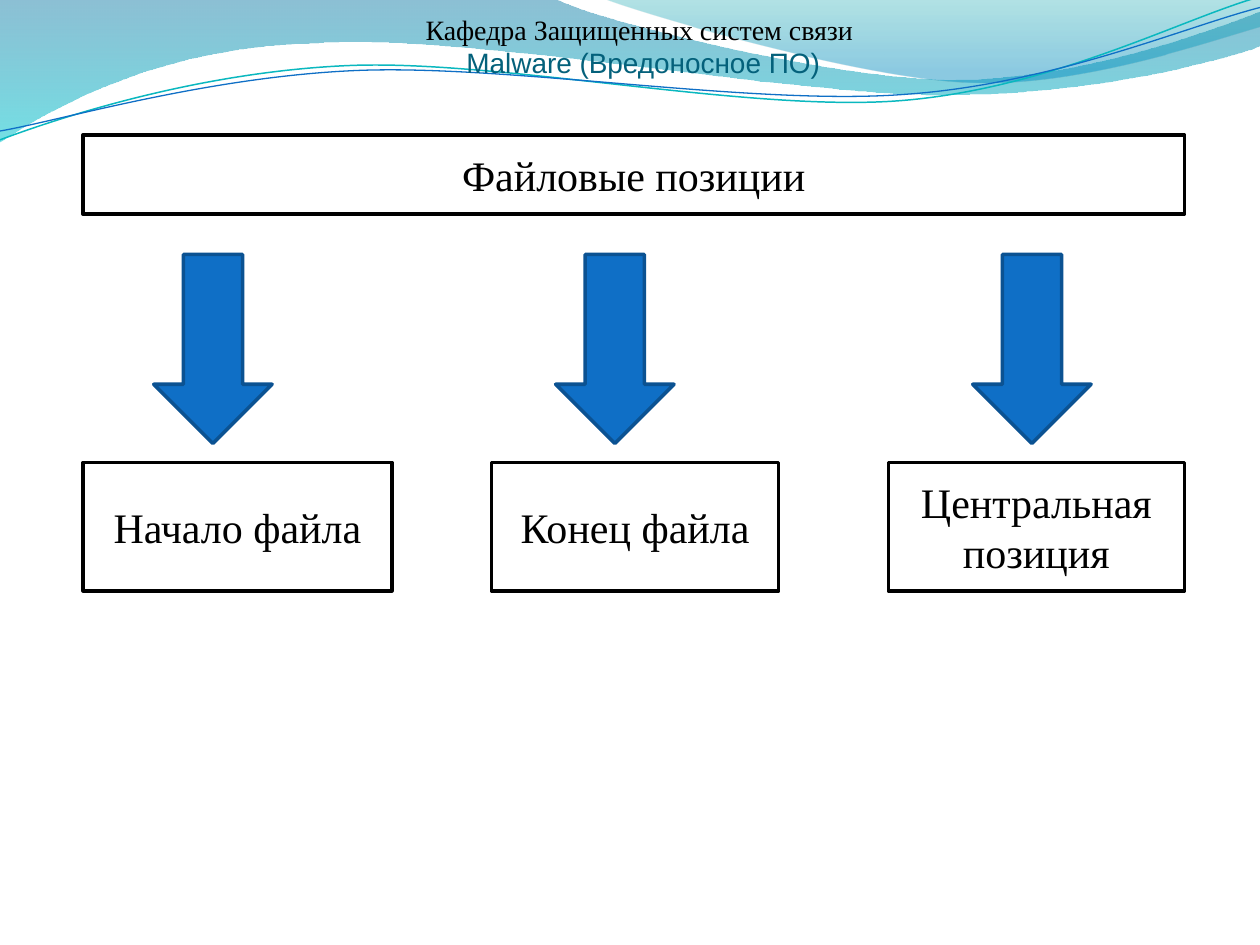
"""Build a slide that shows three file positions below a common heading."""
from math import cos, radians, sin

from lxml.etree import SubElement
from pptx import Presentation
from pptx.dml.color import RGBColor
from pptx.enum.shapes import MSO_SHAPE
from pptx.enum.text import MSO_ANCHOR, MSO_AUTO_SIZE, PP_ALIGN
from pptx.oxml.ns import qn
from pptx.util import Inches, Pt

COLORS = {
    "black": "000000",
    "white": "FFFFFF",
    "title": "04617B",
    "arrow": "0F6FC6",
    "arrow_edge": "0B5292",
    "teal_line": "0AB8BF",
    "left_top": "0074A1",
    "left_bottom": "00C6CF",
    "right_top": "00A1A9",
    "right_bottom": "008BBF",
}
SERIF = "Times New Roman"
CURVE_TILT = 2.7

LEFT_WAVE = [
    [(0, 0)], [(4.4, -0.01)],
    [(4.76, 0.17), (6.64, 0.63), (7.58, 0.63)],
    [(8.53, 0.63), (9.58, 0.26), (10, 0.09)],
    [(10.01, 0.36)],
    [(9.83, 0.44), (8.7, 0.76), (7.46, 0.75)],
    [(6.22, 0.75), (3.82, 0.28), (2.57, 0.34)],
    [(1.29, 0.36), (0.46, 0.83), (-0.01, 1.13)],
    [(0, 0)],
]
RIGHT_WAVE = [
    [(4.79, -0.01)],
    [(5.09, 0.11), (6.82, 0.62), (7.69, 0.65)],
    [(8.56, 0.69), (9.61, 0.32), (10, 0.21)],
    [(10, 0)], [(4.79, -0.01)],
]
TEAL_CURVE = [
    [(0, 1.11)],
    [(0.48, 0.93), (1.58, 0.57), (2.77, 0.52)],
    [(3.95, 0.47), (5.93, 0.89), (7.13, 0.8)],
    [(8.33, 0.71), (9.38, 0.15), (9.98, -0.02)],
]
BLUE_CURVE = [
    [(0, 1.04)],
    [(0.47, 0.96), (1.64, 0.61), (2.83, 0.56)],
    [(4.03, 0.51), (5.97, 0.84), (7.17, 0.75)],
    [(8.36, 0.67), (9.41, 0.21), (10, 0.06)],
]


def color(name):
    """Return the named colour."""
    return RGBColor.from_string(COLORS[name])


def turn(point, center, degrees):
    """Turn a point clockwise around a center."""
    angle = radians(degrees)
    x, y = point[0] - center[0], point[1] - center[1]
    return (
        center[0] + x * cos(angle) - y * sin(angle),
        center[1] + x * sin(angle) + y * cos(angle),
    )


def add_outline(slide, steps, close):
    """Add a freeform whose three-point steps are cubic curves."""
    points = [(Inches(x), Inches(y)) for step in steps for x, y in step]
    builder = slide.shapes.build_freeform(*points[0])
    builder.add_line_segments(points[1:], close=close)
    shape = builder.convert_to_shape()
    shape.shadow.inherit = False
    segments = iter(list(shape.element.iter(qn("a:lnTo"))))
    for step in steps[1:]:
        first, *others = [next(segments) for _ in step]
        if others:
            first.tag = qn("a:cubicBezTo")
        for segment in others:
            first.append(segment[0])
            segment.getparent().remove(segment)
    return shape


def add_wave(slide, steps, stops):
    """Add a wave with a translucent vertical gradient."""
    shape = add_outline(slide, steps, True)
    shape.line.fill.background()
    shape.fill.gradient()
    shape.fill.gradient_angle = 270
    for stop, (position, name, _) in zip(shape.fill.gradient_stops, stops):
        stop.position = position
        stop.color.rgb = color(name)
    for element, (_, _, opacity) in zip(shape.element.iter(qn("a:srgbClr")), stops):
        SubElement(element, qn("a:alpha"), val=str(opacity * 1000))


def add_curve(slide, steps, center, name, width):
    """Add a thin open curve as a level outline that is then tilted."""
    level = [[turn(point, center, CURVE_TILT) for point in step] for step in steps]
    shape = add_outline(slide, level, False)
    shape.rotation = 360 - CURVE_TILT
    shape.fill.background()
    shape.line.color.rgb = color(name)
    shape.line.width = Pt(width)
    return shape


def format_title(title):
    """Place the title and write its two lines."""
    title.left, title.top = Inches(2.26), Inches(0)
    title.width, title.height = Inches(5.63), Inches(0.63)
    frame = title.text_frame
    frame.auto_size = MSO_AUTO_SIZE.NONE
    frame.word_wrap = True
    frame.vertical_anchor = MSO_ANCHOR.BOTTOM
    frame.margin_left = frame.margin_right = frame.margin_bottom = 0
    frame.margin_top = Inches(0.05)
    paragraph = frame.paragraphs[0]
    paragraph.alignment = PP_ALIGN.CENTER
    paragraph.font.size = Pt(16)
    department = paragraph.add_run()
    department.text = "Кафедра Защищенных систем связи"
    department.font.name = SERIF
    department.font.color.rgb = color("black")
    paragraph.add_line_break()
    topic = paragraph.add_run()
    topic.text = " Malware (Вредоносное ПО)"
    topic.font.name = "Arial"
    topic.font.color.rgb = color("title")


def add_block(slide, kind, box, fill, edge):
    """Add a filled and outlined preset shape."""
    shape = slide.shapes.add_shape(kind, *(Inches(value) for value in box))
    shape.shadow.inherit = False
    shape.fill.solid()
    shape.fill.fore_color.rgb = color(fill)
    shape.line.color.rgb = color(edge)
    shape.line.width = Pt(2)
    return shape


def add_box(slide, text, box):
    """Add a white box with centred text."""
    shape = add_block(slide, MSO_SHAPE.FLOWCHART_PROCESS, box, "white", "black")
    frame = shape.text_frame
    frame.word_wrap = True
    frame.vertical_anchor = MSO_ANCHOR.MIDDLE
    paragraph = frame.paragraphs[0]
    paragraph.text = text
    paragraph.alignment = PP_ALIGN.CENTER
    paragraph.font.name = SERIF
    paragraph.font.size = Pt(24)
    paragraph.font.color.rgb = color("black")


def main():
    """Build and save the slide."""
    presentation = Presentation()
    presentation.slide_width, presentation.slide_height = Inches(10), Inches(7.5)
    slide = presentation.slides.add_slide(presentation.slide_layouts[5])

    add_wave(slide, LEFT_WAVE, [(0, "left_top", 45), (1, "left_bottom", 55)])
    add_wave(slide, RIGHT_WAVE, [(0, "right_top", 30), (0.8, "right_bottom", 45)])
    curves = slide.shapes.add_group_shape([
        add_curve(slide, TEAL_CURVE, (4.99, 0.58), "teal_line", 0.85),
        add_curve(slide, BLUE_CURVE, (5, 0.59), "arrow", 0.75),
    ])
    title = slide.shapes.title
    curves.element.addnext(title.element)
    format_title(title)

    add_box(slide, "Файловые позиции", (0.66, 1.07, 8.74, 0.63))
    positions = [
        ("Начало файла", 0.66, 2.45, 1.22),
        ("Конец файла", 3.9, 2.28, 4.41),
        ("Центральная позиция", 7.05, 2.35, 7.72),
    ]
    for text, left, width, arrow_left in positions:
        add_box(slide, text, (left, 3.67, width, 1.02))
        arrow_box = (arrow_left, 2.02, 0.94, 1.5)
        add_block(slide, MSO_SHAPE.DOWN_ARROW, arrow_box, "arrow", "arrow_edge")

    presentation.save("out.pptx")


if __name__ == "__main__":
    main()
